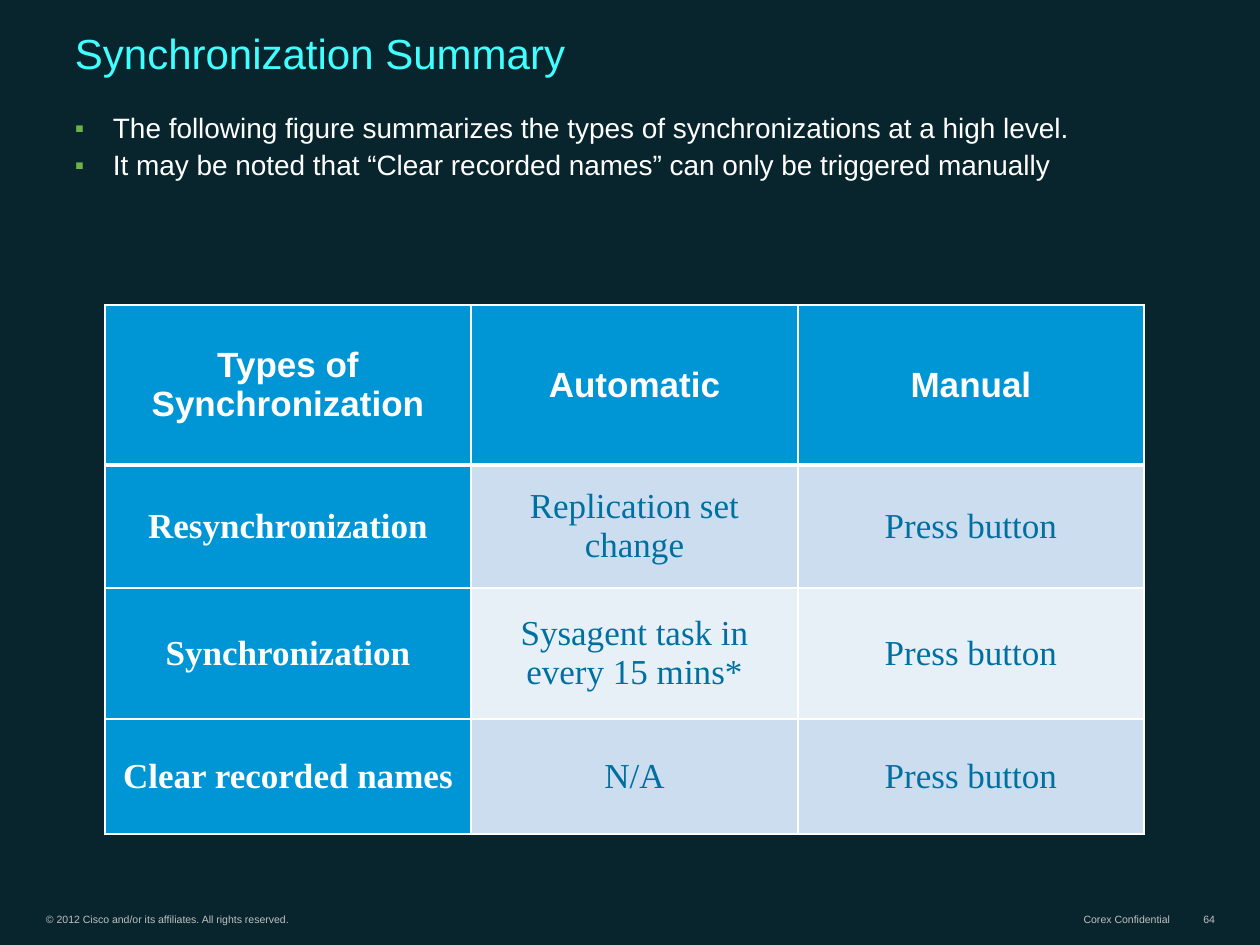
import pptx
import pptx.util
import pptx.dml.color
import pptx.enum.text
import pptx.oxml
import pptx.oxml.ns

SCALE = 914400 / 126
RGBColor = pptx.dml.color.RGBColor
BACKGROUND = RGBColor(0x08, 0x25, 0x2E)
WHITE = RGBColor(0xFF, 0xFF, 0xFF)
CYAN = RGBColor(0x40, 0xFF, 0xFE)
GRAY = RGBColor(0xC0, 0xC0, 0xC0)
BLUE = RGBColor(0x00, 0x96, 0xD6)
DARK_BLUE = RGBColor(0x00, 0x70, 0xA0)
BAND = RGBColor(0xCC, 0xDD, 0xF0)
LIGHT_BAND = RGBColor(0xE7, 0xEF, 0xF7)
BULLET = RGBColor(0x6D, 0xB3, 0x44)
ALIGN = pptx.enum.text.PP_ALIGN
ANCHOR = pptx.enum.text.MSO_ANCHOR


def px(length):
    return pptx.util.Emu(round(length * SCALE))


def write(paragraph, text, size=16, color=WHITE, font="Arial", bold=False,
          align=ALIGN.LEFT, spacing=1.0, before=0, after=0, bullet=None):
    paragraph.alignment = align
    paragraph.line_spacing = spacing
    paragraph.space_before = pptx.util.Pt(before)
    paragraph.space_after = pptx.util.Pt(after)
    if bullet:
        properties = paragraph._p.get_or_add_pPr()
        properties.set("marL", str(px(38)))
        properties.set("indent", str(-px(38)))
        namespace = pptx.oxml.ns.nsdecls("a")
        for element in (
            f'<a:buClr {namespace}><a:srgbClr val="{BULLET}"/></a:buClr>',
            f'<a:buSzPct {namespace} val="95000"/>',
            f'<a:buFont {namespace} typeface="Arial"/>',
            f'<a:buChar {namespace} char="{bullet}"/>',
        ):
            properties.append(pptx.oxml.parse_xml(element))
    run = paragraph.add_run()
    run.text = text
    run.font.name = font
    run.font.size = pptx.util.Pt(size)
    run.font.bold = bold
    run.font.color.rgb = color


presentation = pptx.Presentation()
presentation.slide_width = px(1260)
presentation.slide_height = px(945)
slide = presentation.slides.add_slide(presentation.slide_layouts[6])
slide.background.fill.solid()
slide.background.fill.fore_color.rgb = BACKGROUND

footer = {"size": 6, "color": GRAY}
right_footer = {**footer, "align": ALIGN.RIGHT}
bulleted = {"spacing": 0.95, "bullet": "▪"}
text_boxes = [
    ((34, 908, 471, 24), ANCHOR.BOTTOM,
     [("© 2012 Cisco and/or its affiliates. All rights reserved.", footer)]),
    ((1042, 908, 140, 24), ANCHOR.BOTTOM, [("Corex Confidential", right_footer)]),
    ((1177, 908, 50, 24), ANCHOR.BOTTOM, [("64", right_footer)]),
    ((63, 11, 1123, 73), ANCHOR.BOTTOM,
     [("Synchronization Summary", {"size": 24, "color": CYAN, "spacing": 0.8})]),
    ((63, 107, 1184, 101), ANCHOR.TOP, [
        ("The following figure summarizes the types of synchronizations at a high level.",
         bulleted),
        ("It may be noted that “Clear recorded names” can only be triggered manually",
         {**bulleted, "before": 3}),
    ]),
]
for bounds, anchor, lines in text_boxes:
    frame = slide.shapes.add_textbox(*map(px, bounds)).text_frame
    frame.word_wrap = True
    frame.vertical_anchor = anchor
    frame.margin_left = frame.margin_right = px(12)
    frame.margin_top = frame.margin_bottom = px(6)
    for index, (text, text_format) in enumerate(lines):
        paragraph = frame.add_paragraph() if index else frame.paragraphs[0]
        write(paragraph, text, **text_format)

rows = [
    ("Types of Synchronization", "Automatic", "Manual"),
    ("Resynchronization", "Replication set change", "Press button"),
    ("Synchronization", "Sysagent task in every 15 mins*", "Press button"),
    ("Clear recorded names", "N/A", "Press button"),
]
column_widths = [366, 327, 346]
row_heights = [160, 123, 131, 115]
table = slide.shapes.add_table(
    len(rows), len(column_widths), px(105), px(305),
    px(sum(column_widths)), px(sum(row_heights))).table
for column, width in zip(table.columns, column_widths):
    column.width = px(width)
for row, height in zip(table.rows, row_heights):
    row.height = px(height)

for row_index, texts in enumerate(rows):
    for column_index, text in enumerate(texts):
        cell = table.cell(row_index, column_index)
        is_header = row_index == 0
        is_heading = is_header or column_index == 0
        cell.vertical_anchor = ANCHOR.MIDDLE
        cell.margin_left = cell.margin_right = px(10)
        cell.margin_top = cell.margin_bottom = 0
        write(cell.text_frame.paragraphs[0], text, size=20, bold=is_heading,
              color=WHITE if is_heading else DARK_BLUE,
              font="Arial" if is_header else "Times New Roman",
              align=ALIGN.CENTER, after=3)
        properties = cell._tc.get_or_add_tcPr()
        for side in ("L", "R", "T", "B"):
            is_thick = (row_index, side) in ((0, "B"), (1, "T"))
            width = pptx.util.Pt(3 if is_thick else 1)
            properties.append(pptx.oxml.parse_xml(
                f'<a:ln{side} {pptx.oxml.ns.nsdecls("a")} w="{width}"><a:solidFill>'
                f'<a:srgbClr val="{WHITE}"/></a:solidFill></a:ln{side}>'))
        cell.fill.solid()
        band = BAND if row_index % 2 else LIGHT_BAND
        cell.fill.fore_color.rgb = BLUE if is_heading else band

presentation.save("out.pptx")
